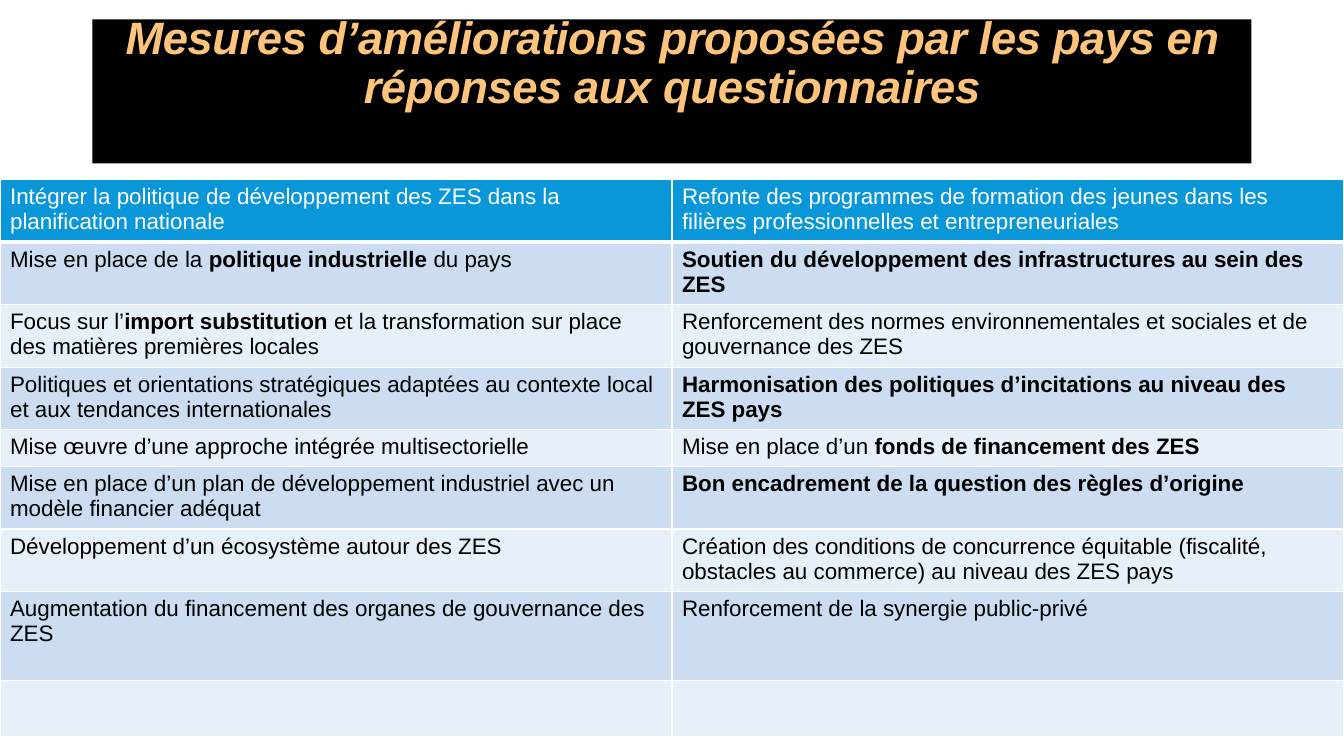
"""Build the slide on improvement measures proposed by the countries."""
import copy

from lxml import etree
from pptx import Presentation
from pptx.dml import color
from pptx.enum import shapes, text
from pptx.oxml import ns
from pptx.util import Pt

FONT = "Arial"
BLACK, WHITE, ORANGE = "000000", "FFFFFF", "FEC47C"
HEADER_FILL, BAND_FILLS = "0A97D9", ("E7EFF8", "CCDDF1")
TITLE = "Mesures d’améliorations proposées par les pays en réponses aux questionnaires"
ROW_HEIGHTS = [44.7] * 4 + [26.2] + [44.7] * 2 + [63.7, 39.8]
REGULAR, BOLD = False, True

MEASURES = [
    ([("Intégrer la politique de développement des ZES dans la planification nationale", REGULAR)],
     [("Refonte des programmes de formation des jeunes dans les filières professionnelles "
       "et entrepreneuriales", REGULAR)]),
    ([("Mise en place de la ", REGULAR), ("politique industrielle ", BOLD), ("du pays", REGULAR)],
     [("Soutien du développement des infrastructures au sein des ZES", BOLD)]),
    ([("Focus sur l’", REGULAR), ("import substitution ", BOLD),
      ("et la transformation sur place des matières premières locales", REGULAR)],
     [("Renforcement des normes environnementales et sociales et de gouvernance des ZES", REGULAR)]),
    ([("Politiques et orientations stratégiques adaptées au contexte local et aux tendances "
       "internationales", REGULAR)],
     [("Harmonisation des politiques d’incitations au niveau des ZES pays", BOLD)]),
    ([("Mise œuvre d’une approche intégrée multisectorielle", REGULAR)],
     [("Mise en place d’un ", REGULAR), ("fonds de financement des ZES", BOLD)]),
    ([("Mise en place d’un plan de développement industriel avec un modèle financier adéquat", REGULAR)],
     [("Bon encadrement de la question des règles d’origine", BOLD)]),
    ([("Développement d’un écosystème autour des ZES", REGULAR)],
     [("Création des conditions de concurrence équitable (fiscalité, obstacles au commerce) "
       "au niveau des ZES pays", REGULAR)]),
    ([("Augmentation du financement des organes de gouvernance des ZES", REGULAR)],
     [("Renforcement de la synergie public-privé", REGULAR)]),
    ([], []),
]


def paint(fill, hex_color):
    """Apply a solid colour to a fill."""
    fill.solid()
    fill.fore_color.rgb = color.RGBColor.from_string(hex_color)


def add_run(paragraph, wording, size, hex_color, bold):
    """Append a formatted run and return it."""
    run = paragraph.add_run()
    run.text = wording
    run.font.name, run.font.size, run.font.bold = FONT, Pt(size), bold
    paint(run.font.fill, hex_color)
    return run


def add_title(slide):
    """Draw the black title band, its text closed by a line break."""
    shape = slide.shapes.add_shape(
        shapes.MSO_SHAPE.RECTANGLE, Pt(66), Pt(13.8), Pt(828), Pt(103))
    shape.shadow.inherit = False
    paint(shape.fill, BLACK)
    shape.line.fill.background()
    frame = shape.text_frame
    frame.word_wrap = True
    frame.vertical_anchor = text.MSO_ANCHOR.MIDDLE
    paragraph = frame.paragraphs[0]
    paragraph.alignment = text.PP_ALIGN.CENTER
    paragraph.line_spacing = 0.9
    run = add_run(paragraph, TITLE, 32.4, ORANGE, BOLD)
    run.font.italic = True
    properties = run._r.get_or_add_rPr()
    properties.set("spc", "-30")
    paragraph.add_line_break()
    paragraph._p[-1].append(copy.deepcopy(properties))
    ending = etree.SubElement(paragraph._p, ns.qn("a:endParaRPr"), sz="3240")
    etree.SubElement(ending, ns.qn("a:latin"), typeface=FONT)


def add_borders(cell, bottom_width, top_width):
    """Give a cell white borders on all sides."""
    properties = cell._tc.get_or_add_tcPr()
    for side, width in (("L", 1), ("R", 1), ("T", top_width), ("B", bottom_width)):
        line = etree.SubElement(properties, ns.qn(f"a:ln{side}"), w=str(Pt(width)))
        fill = etree.SubElement(line, ns.qn("a:solidFill"))
        etree.SubElement(fill, ns.qn("a:srgbClr"), val=WHITE)


def add_measures_table(slide):
    """Draw the two-column table of measures."""
    table = slide.shapes.add_table(
        len(MEASURES), 2, 0, Pt(128.3), Pt(960), Pt(sum(ROW_HEIGHTS))).table
    for index, (height, measures) in enumerate(zip(ROW_HEIGHTS, MEASURES)):
        table.rows[index].height = Pt(height)
        is_header = index == 0
        for column, runs in enumerate(measures):
            cell = table.cell(index, column)
            add_borders(cell, 3 if is_header else 1, 3 if index == 1 else 1)
            paint(cell.fill, HEADER_FILL if is_header else BAND_FILLS[index % 2])
            for wording, bold in runs:
                add_run(cell.text_frame.paragraphs[0], wording, 16,
                        WHITE if is_header else BLACK, bold)


def main():
    """Create and save the presentation."""
    presentation = Presentation()
    presentation.slide_width, presentation.slide_height = Pt(960), Pt(540)
    slide = presentation.slides.add_slide(presentation.slide_layouts[6])
    add_title(slide)
    add_measures_table(slide)
    presentation.save("out.pptx")


if __name__ == "__main__":
    main()
